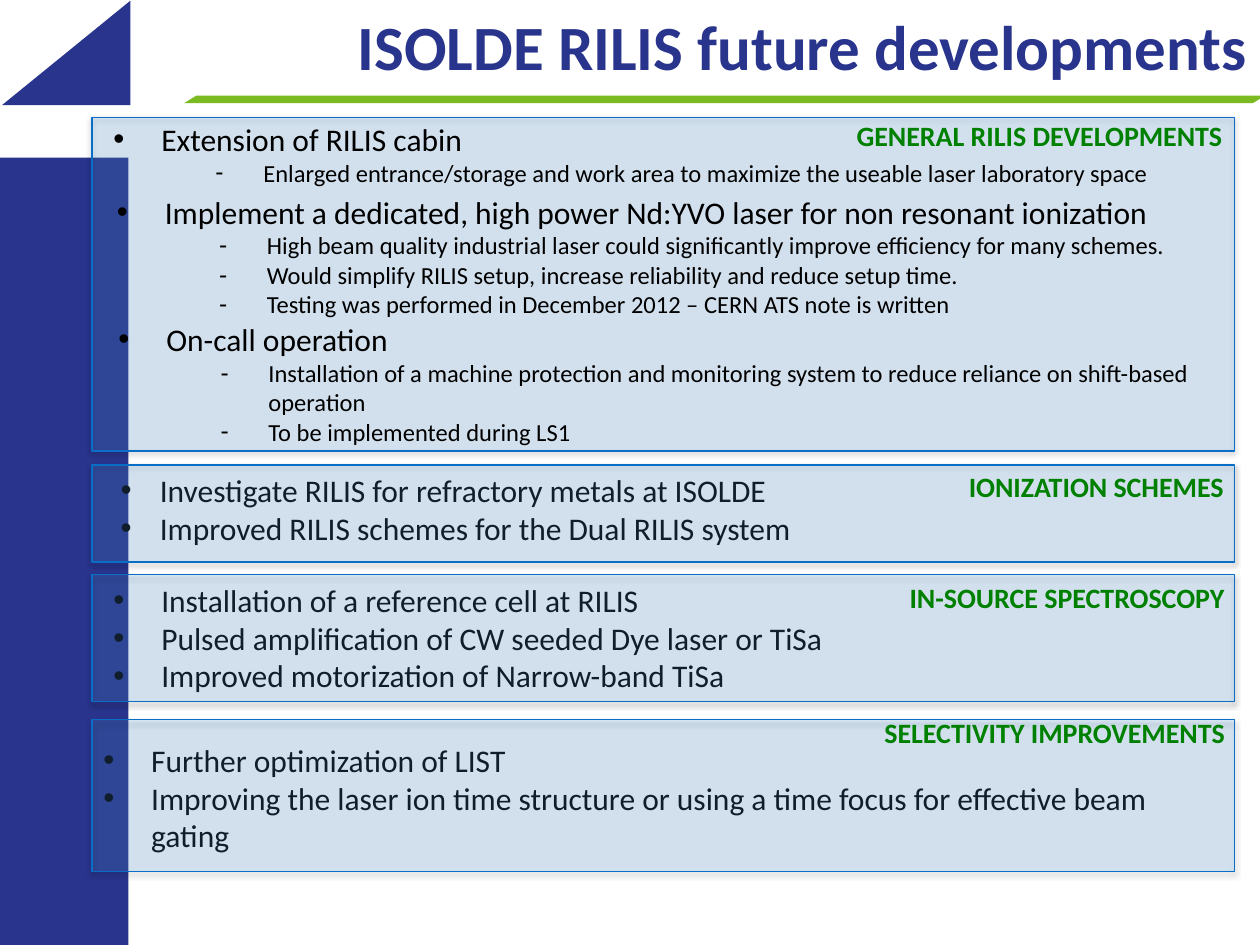
"""Build the slide on future developments of the ISOLDE RILIS laser ion source."""
from lxml.etree import SubElement
from pptx import Presentation
from pptx.dml.color import RGBColor
from pptx.enum.shapes import MSO_SHAPE
from pptx.enum.text import MSO_ANCHOR, MSO_AUTO_SIZE, PP_ALIGN
from pptx.oxml import parse_xml
from pptx.oxml.ns import nsdecls, qn
from pptx.util import Inches, Pt

WIDTH, HEIGHT = Inches(10), Inches(7.5)
COLUMNS, ROWS = 1000, 750
COLORS = {"navy": "29348C", "lime": "7BBA21", "panel": "59AAF2", "border": "0A6DC6",
          "label": "008000", "text": "000000"}
FONT = "Calibri"
TITLE = "ISOLDE RILIS future developments"
PANEL_LEFT, PANEL_WIDTH = 73, 907
NARROW, DEFAULT = (7, 4), (10, 5)
BULLETS = {0: ("•", 38, 18), 1: ("-", 119, 14)}
HANGING = 38

DECORATIONS = [
    (MSO_SHAPE.RECTANGLE, (0, 125, 102, 628), 0, "navy"),
    (MSO_SHAPE.RIGHT_TRIANGLE, (11, -9, 83, 102), 270, "navy"),
    (MSO_SHAPE.PARALLELOGRAM, (146, 76, 858, 6), 0, "lime"),
]
PANELS = [
    {"rows": (369, 77), "label": ("IONIZATION SCHEMES", (759, 368, 228, 37)), "behind": True,
     "lists": [((86, 369, 869, 71), DEFAULT, 31, [
         (0, "Investigate RILIS for refractory metals at ISOLDE"),
         (0, "Improved RILIS schemes for the Dual RILIS system")])]},
    {"rows": (456, 101), "label": ("IN-SOURCE SPECTROSCOPY", (712, 456, 275, 37)), "behind": True,
     "lists": [((83, 457, 882, 98), NARROW, HANGING, [
         (0, "Installation of a reference cell at RILIS"),
         (0, "Pulsed amplification of CW seeded Dye laser or TiSa"),
         (0, "Improved motorization of Narrow-band TiSa")])]},
    {"rows": (571, 121), "label": ("SELECTIVITY IMPROVEMENTS", (692, 563, 295, 37)), "behind": True,
     "lists": [((75, 584, 882, 98), NARROW, HANGING, [
         (0, "Further optimization of LIST"),
         (0, "Improving the laser ion time structure or using a time focus for "
             "effective beam gating")])]},
    {"rows": (93, 265), "label": ("GENERAL RILIS DEVELOPMENTS", (670, 89, 313, 37)), "behind": False,
     "lists": [
         ((83, 91, 878, 61), NARROW, HANGING, [
             (0, "Extension of RILIS cabin"),
             (1, "Enlarged entrance/storage and work area to maximize the useable "
                 "laser laboratory space")]),
         ((83, 148, 878, 111), DEFAULT, HANGING, [
             (0, "Implement a dedicated, high power Nd:YVO laser for non resonant ionization"),
             (1, "High beam quality industrial laser could significantly improve "
                 "efficiency for many schemes."),
             (1, "Would simplify RILIS setup, increase reliability and reduce setup time."),
             (1, "Testing was performed in December 2012 – CERN ATS note is written")]),
         ((87, 250, 878, 108), NARROW, HANGING, [
             (0, "On-call operation"),
             (1, "Installation of a machine protection and monitoring system to reduce "
                 "reliance on shift-based operation"),
             (1, "To be implemented during LS1")])]},
]


def across(columns):
    return round(WIDTH * columns / COLUMNS)


def down(rows):
    return round(HEIGHT * rows / ROWS)


def place(box):
    left, top, width, height = box
    return across(left), down(top), across(width), down(height)


def add_shape(slide, kind, box, color):
    shape = slide.shapes.add_shape(kind, *place(box))
    shape.shadow.inherit = False
    shape.fill.solid()
    shape.fill.fore_color.rgb = RGBColor.from_string(COLORS[color])
    shape.line.fill.background()
    return shape


def add_run(paragraph, text, size, color, bold=False):
    run = paragraph.add_run()
    run.text = text
    run.font.name, run.font.size, run.font.bold = FONT, Pt(size), bold
    run.font.color.rgb = RGBColor.from_string(COLORS[color])


def add_text_frame(slide, box, insets=DEFAULT, wrap=True):
    frame = slide.shapes.add_textbox(*place(box)).text_frame
    frame.word_wrap = wrap
    frame.auto_size = MSO_AUTO_SIZE.SHAPE_TO_FIT_TEXT
    frame.margin_left = frame.margin_right = across(insets[0])
    frame.margin_top = frame.margin_bottom = down(insets[1])
    return frame


def add_list(slide, box, insets, hanging, items):
    frame = add_text_frame(slide, box, insets)
    for index, (level, text) in enumerate(items):
        paragraph = frame.add_paragraph() if index else frame.paragraphs[0]
        bullet, indent, size = BULLETS[level]
        paragraph.level = level
        properties = paragraph._p.get_or_add_pPr()
        properties.set("marL", str(across(indent if level else hanging)))
        properties.set("indent", str(-across(hanging)))
        SubElement(properties, qn("a:buFont")).set("typeface", "Arial")
        SubElement(properties, qn("a:buChar")).set("char", bullet)
        add_run(paragraph, text, size, "text")


def add_panel(slide, rows):
    top, height = rows
    panel = add_shape(slide, MSO_SHAPE.RECTANGLE, (PANEL_LEFT, top, PANEL_WIDTH, height), "panel")
    fill_color = panel._element.spPr.find(qn("a:solidFill"))[0]
    SubElement(fill_color, qn("a:alpha")).set("val", "18000")
    panel.line.color.rgb = RGBColor.from_string(COLORS["border"])
    panel.line.width = Pt(0.75)
    effects = panel._element.spPr.find(qn("a:effectLst"))
    effects.append(parse_xml(
        f'<a:outerShdw {nsdecls("a")} blurRad="{Pt(3.1)}" dist="{Pt(1.6)}" dir="5400000" '
        f'rotWithShape="0"><a:srgbClr val="{COLORS["text"]}"><a:alpha val="38000"/>'
        '</a:srgbClr></a:outerShdw>'))


def add_section(slide, section):
    if not section["behind"]:
        add_panel(slide, section["rows"])
    for entry in section["lists"]:
        add_list(slide, *entry)
    if section["behind"]:
        add_panel(slide, section["rows"])
    text, box = section["label"]
    frame = add_text_frame(slide, box, wrap=False)
    add_run(frame.paragraphs[0], text, 16, "label", True)


def main():
    presentation = Presentation()
    presentation.slide_width, presentation.slide_height = WIDTH, HEIGHT
    slide = presentation.slides.add_slide(presentation.slide_layouts[6])
    for kind, box, rotation, color in DECORATIONS:
        shape = add_shape(slide, kind, box, color)
        shape.rotation = rotation
        if kind == MSO_SHAPE.PARALLELOGRAM:
            shape.adjustments[0] = 1.63
    title = add_text_frame(slide, (146, -4, 854, 80))
    title.auto_size = MSO_AUTO_SIZE.NONE
    title.vertical_anchor = MSO_ANCHOR.MIDDLE
    title.paragraphs[0].alignment = PP_ALIGN.RIGHT
    add_run(title.paragraphs[0], TITLE, 36, "navy", True)
    for section in PANELS:
        add_section(slide, section)
    presentation.save("out.pptx")


if __name__ == "__main__":
    main()
